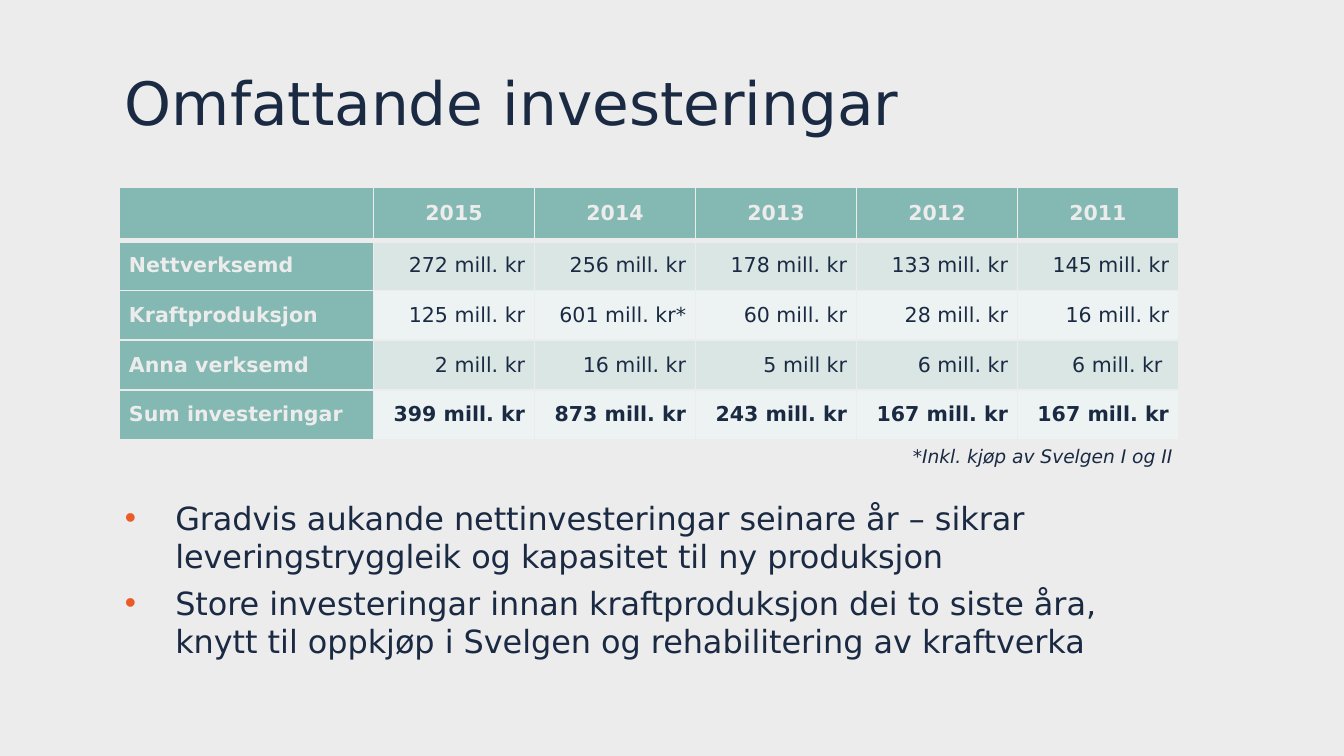
from lxml.etree import SubElement
from pptx import Presentation
from pptx.dml.color import RGBColor
from pptx.enum.text import MSO_ANCHOR, PP_ALIGN
from pptx.oxml.ns import qn
from pptx.util import Pt

FONT = "DejaVu Sans"
NAVY = RGBColor(0x1B, 0x2A, 0x43)
LIGHT = RGBColor(0xEC, 0xEC, 0xEC)
TEAL = RGBColor(0x84, 0xB8, 0xB2)
BAND_DARK = RGBColor(0xD9, 0xE6, 0xE4)
BAND_LIGHT = RGBColor(0xED, 0xF3, 0xF2)
ORANGE = RGBColor(0xEA, 0x5B, 0x28)

ROWS = [
    ["", "2015", "2014", "2013", "2012", "2011"],
    ["Nettverksemd", "272 mill. kr", "256 mill. kr", "178 mill. kr", "133 mill. kr", "145 mill. kr"],
    ["Kraftproduksjon", "125 mill. kr", "601 mill. kr*", "60 mill. kr", "28 mill. kr", "16 mill. kr"],
    ["Anna verksemd", "2 mill. kr", "16 mill. kr", "5 mill kr", "6 mill. kr", "6 mill. kr "],
    ["Sum investeringar", "399 mill. kr", "873 mill. kr", "243 mill. kr", "167 mill. kr", "167 mill. kr"],
]
BULLETS = [
    "Gradvis aukande nettinvesteringar seinare år – sikrar leveringstryggleik og kapasitet til ny produksjon",
    "Store investeringar innan kraftproduksjon dei to siste åra, knytt til oppkjøp i Svelgen og rehabilitering av kraftverka",
]


def add_run(p, text, size, color=NAVY, bold=False, italic=False):
    r = p.add_run()
    r.text = text
    r.font.name = FONT
    r.font.size = Pt(size)
    r.font.color.rgb = color
    r.font.bold = bold
    r.font.italic = italic


def add_text_box(s, left, top, width, height):
    tf = s.shapes.add_textbox(Pt(left), Pt(top), Pt(width), Pt(height)).text_frame
    tf.word_wrap = True
    return tf


def set_bullet(p, indent):
    pPr = p._p.get_or_add_pPr()
    pPr.set("marL", str(Pt(indent)))
    pPr.set("indent", str(-Pt(indent)))
    color = SubElement(pPr, qn("a:buClr"))
    SubElement(color, qn("a:srgbClr"), val=str(ORANGE))
    SubElement(pPr, qn("a:buFont"), typeface="Arial")
    SubElement(pPr, qn("a:buChar"), char="•")


def add_bullets(s):
    tf = add_text_box(s, 59.8, 263.5, 567.4, 118.8)
    for i, text in enumerate(BULLETS):
        p = tf.paragraphs[0] if i == 0 else tf.add_paragraph()
        set_bullet(p, 27)
        p.space_before = Pt(3.4 if i else 0)
        p.space_after = Pt(1)
        add_run(p, text, 17.1)


def set_borders(cell, top, bottom):
    tcPr = cell._tc.get_or_add_tcPr()
    for side, width in (("L", 1), ("R", 1), ("T", top), ("B", bottom)):
        ln = SubElement(tcPr, qn(f"a:ln{side}"), w=str(Pt(width)))
        fill = SubElement(ln, qn("a:solidFill"))
        SubElement(fill, qn("a:srgbClr"), val=str(LIGHT))


def fill_cell(cell, text, row, col):
    heading = row == 0 or col == 0
    set_borders(cell, 3 if row == 1 else 1, 3 if row == 0 else 1)
    cell.fill.solid()
    cell.fill.fore_color.rgb = TEAL if heading else BAND_DARK if row % 2 else BAND_LIGHT
    cell.vertical_anchor = MSO_ANCHOR.MIDDLE
    cell.margin_left = cell.margin_right = Pt(5)
    cell.margin_top = cell.margin_bottom = Pt(0)
    if text:
        p = cell.text_frame.paragraphs[0]
        p.alignment = PP_ALIGN.CENTER if row == 0 else PP_ALIGN.RIGHT if col else PP_ALIGN.LEFT
        bold = heading or row == len(ROWS) - 1
        add_run(p, text, 11, LIGHT if heading else NAVY, bold)


def add_investment_table(s):
    table = s.shapes.add_table(
        len(ROWS), len(ROWS[0]), Pt(64.1), Pt(100.1), Pt(567.4), Pt(135.4)
    ).table
    for i, column in enumerate(table.columns):
        column.width = Pt(86.25 if i else 136.1)
    for i, row in enumerate(table.rows):
        row.height = Pt(26.65 if i else 28.8)
    for i, values in enumerate(ROWS):
        for j, text in enumerate(values):
            fill_cell(table.cell(i, j), text, i, j)


def main():
    prs = Presentation()
    prs.slide_width, prs.slide_height = Pt(720), Pt(405)
    s = prs.slides.add_slide(prs.slide_layouts[6])
    s.background.fill.solid()
    s.background.fill.fore_color.rgb = LIGHT

    title = add_text_box(s, 59.8, 24.5, 567.4, 59.8)
    title.vertical_anchor = MSO_ANCHOR.MIDDLE
    add_run(title.paragraphs[0], "Omfattande investeringar", 32)

    add_bullets(s)

    note = add_text_box(s, 394.6, 234.7, 240.5, 19.4)
    note.paragraphs[0].alignment = PP_ALIGN.RIGHT
    add_run(note.paragraphs[0], "*Inkl. kjøp av Svelgen I og II", 10, italic=True)

    add_investment_table(s)
    prs.save("out.pptx")


if __name__ == "__main__":
    main()
